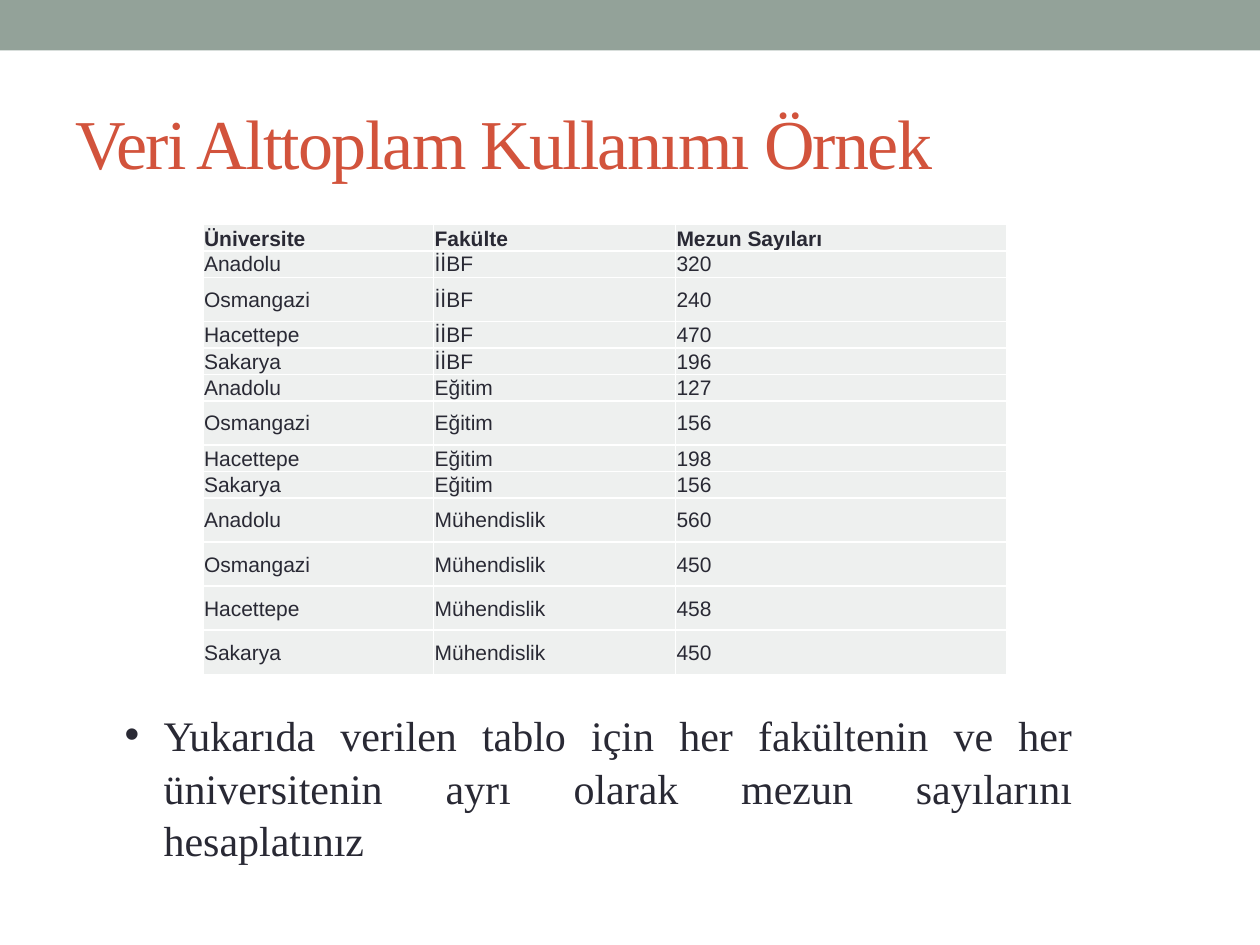
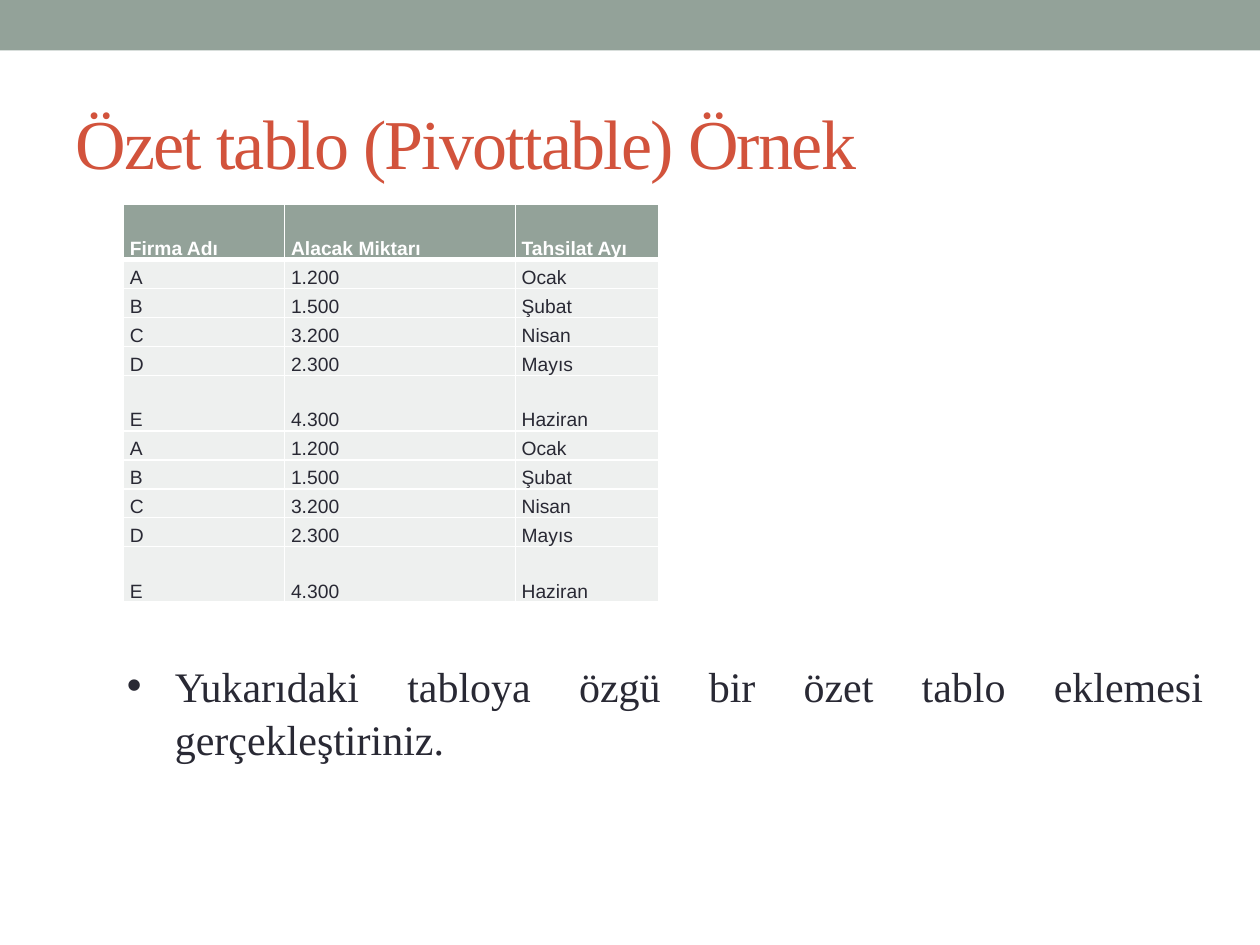
import dataclasses

import lxml.etree
import pptx
import pptx.dml.color
import pptx.enum.shapes
import pptx.enum.text
import pptx.oxml.ns
import pptx.util

Inches = pptx.util.Inches
Pt = pptx.util.Pt
Anchor = pptx.enum.text.MSO_ANCHOR
qn = pptx.oxml.ns.qn


@dataclasses.dataclass(frozen=True)
class Theme:
    band: str = "93A299"
    title: str = "D2533C"
    ink: str = "292934"
    cell: str = "EEF0EF"
    white: str = "FFFFFF"
    serif: str = "Times New Roman"
    sans: str = "Arial"
    title_size: int = 40
    body_size: int = 24


def rgb(value):
    return pptx.dml.color.RGBColor.from_string(value)


class Deck:
    """Holds the theme and the current page, and draws each kind of element."""

    def __init__(self, theme):
        self.theme = theme
        self.deck = pptx.Presentation()
        self.deck.slide_width = Inches(10)
        self.deck.slide_height = Inches(7.5)
        self.page = None

    def add_page(self, title):
        self.page = self.deck.slides.add_slide(self.deck.slide_layouts[6])
        band = self.page.shapes.add_shape(
            pptx.enum.shapes.MSO_SHAPE.RECTANGLE, 0, 0, Inches(10), Inches(0.4))
        band.shadow.inherit = False
        band.fill.solid()
        band.fill.fore_color.rgb = rgb(self.theme.band)
        band.line.fill.background()
        para = self.add_box(0.5, 0.58, 9, 1.08, Anchor.MIDDLE)
        span = para.add_run()
        span.text = title
        span._r.get_or_add_rPr().set("spc", "-100")
        self.style(para, self.theme.serif, self.theme.title_size, self.theme.title)

    def add_box(self, left, top, width, height, anchor=Anchor.TOP):
        box = self.page.shapes.add_textbox(
            Inches(left), Inches(top), Inches(width), Inches(height))
        box.text_frame.word_wrap = True
        box.text_frame.vertical_anchor = anchor
        return box.text_frame.paragraphs[0]

    def style(self, para, face, size, color, bold=False):
        para.font.name = face
        para.font.size = Pt(size)
        para.font.color.rgb = rgb(color)
        para.font.bold = bold

    def add_bullet(self, text, left, top, width, height, indent):
        para = self.add_box(left, top, width, height)
        para.text = text
        para.alignment = pptx.enum.text.PP_ALIGN.JUSTIFY
        para.line_spacing = 1.05
        properties = para._p.get_or_add_pPr()
        properties.set("marL", str(Inches(indent)))
        properties.set("indent", str(-Inches(indent)))
        lxml.etree.SubElement(properties, qn("a:buFont"), typeface=self.theme.sans)
        lxml.etree.SubElement(properties, qn("a:buChar"), char="•")
        self.style(para, self.theme.serif, self.theme.body_size, self.theme.ink)

    def add_borders(self, cell, top, bottom):
        properties = cell._tc.get_or_add_tcPr()
        for side, width in {"L": 1, "R": 1, "T": top, "B": bottom}.items():
            line = lxml.etree.SubElement(
                properties, qn(f"a:ln{side}"), w=str(Pt(width)))
            fill = lxml.etree.SubElement(line, qn("a:solidFill"))
            lxml.etree.SubElement(fill, qn("a:srgbClr"), val=self.theme.white)

    def add_table(self, rows, left, top, widths, heights, size, margins,
                  body_anchor, header_fill, header_ink, header_rule, spacing):
        table = self.page.shapes.add_table(
            len(rows), len(widths), Inches(left), Inches(top),
            Inches(sum(widths)), Inches(sum(heights))).table
        table.first_row = table.horz_banding = False
        for column, width in zip(table.columns, widths):
            column.width = Inches(width)
        for index, (texts, height) in enumerate(zip(rows, heights)):
            header = index == 0
            table.rows[index].height = Inches(height)
            for cell, text in zip(table.rows[index].cells, texts):
                self.add_borders(cell, header_rule if index == 1 else 1,
                                 header_rule if header else 1)
                cell.fill.solid()
                cell.fill.fore_color.rgb = rgb(header_fill if header else self.theme.cell)
                cell.vertical_anchor = Anchor.BOTTOM if header else body_anchor
                (cell.margin_left, cell.margin_top,
                 cell.margin_right, cell.margin_bottom) = map(Inches, margins)
                cell.text = text
                para = cell.text_frame.paragraphs[0]
                para.line_spacing = spacing
                self.style(para, self.theme.sans, size,
                           header_ink if header else self.theme.ink, header)

    def save(self):
        self.deck.save("out.pptx")


def main():
    theme = Theme()
    deck = Deck(theme)

    universities = ["Anadolu", "Osmangazi", "Hacettepe", "Sakarya"]
    graduates = {
        "İİBF": [320, 240, 470, 196],
        "Eğitim": [127, 156, 198, 156],
        "Mühendislik": [560, 450, 458, 450],
    }
    rows = [("Üniversite", "Fakülte", "Mezun Sayıları")]
    rows += [(university, faculty, str(count))
             for faculty, counts in graduates.items()
             for university, count in zip(universities, counts)]
    heights = [0.35 if "Osmangazi" in row or "Mühendislik" in row else 0.19
               for row in rows]
    deck.add_page("Veri Alttoplam Kullanımı Örnek")
    deck.add_table(rows, 1.61, 1.78, [1.83, 1.92, 2.63], heights, size=12,
                   margins=(0.01, 0.01, 0.01, 0), body_anchor=Anchor.MIDDLE,
                   header_fill=theme.cell, header_ink=theme.ink,
                   header_rule=1, spacing=1.0)
    deck.add_bullet("Yukarıda verilen tablo için her fakültenin ve her üniversitenin "
                    "ayrı olarak mezun sayılarını hesaplatınız",
                    0.89, 5.56, 7.72, 1.31, indent=0.31)

    receivables = [
        ("A", "1.200", "Ocak"),
        ("B", "1.500", "Şubat"),
        ("C", "3.200", "Nisan"),
        ("D", "2.300", "Mayıs"),
        ("E", "4.300", "Haziran"),
    ]
    rows = [("Firma Adı", "Alacak Miktarı", "Tahsilat Ayı")] + receivables * 2
    heights = [0.44 if index % 5 == 0 else 0.23 for index in range(len(rows))]
    deck.add_page("Özet tablo (Pivottable) Örnek")
    deck.add_table(rows, 0.98, 1.62, [1.28, 1.83, 1.14], heights, size=11,
                   margins=(0.05, 0, 0.05, 0), body_anchor=Anchor.BOTTOM,
                   header_fill=theme.band, header_ink=theme.white,
                   header_rule=3, spacing=1.15)
    deck.add_bullet("Yukarıdaki tabloya özgü bir özet tablo eklemesi gerçekleştiriniz.",
                    0.91, 5.17, 8.74, 0.91, indent=0.38)

    deck.save()


if __name__ == "__main__":
    main()
